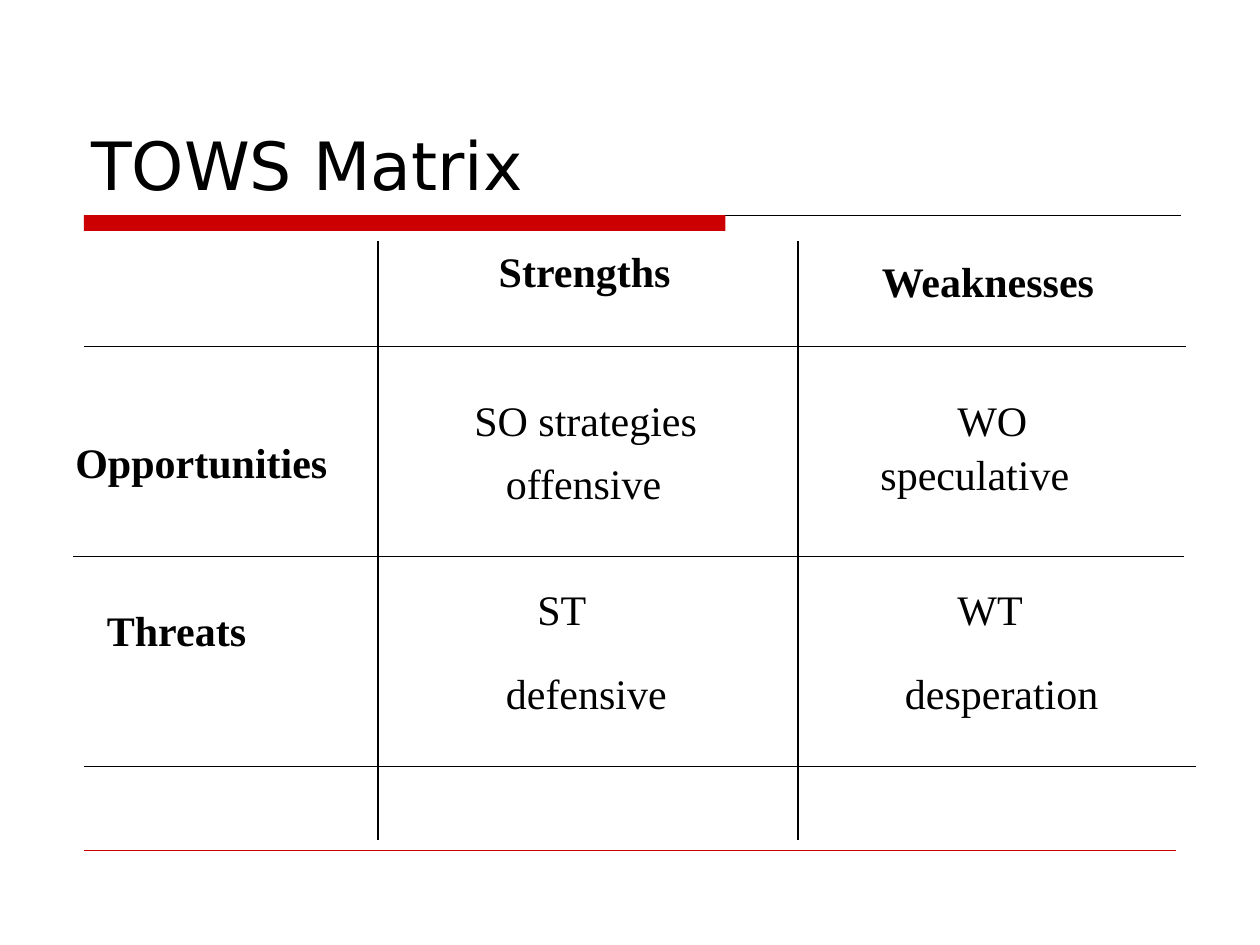
from pptx import Presentation
from pptx.dml.color import RGBColor
from pptx.enum import shapes, text
from pptx.oxml.ns import qn
from pptx.util import Pt

COLORS = {"ink": "000000", "accent": "CC0000"}
SERIF, SANS = "Times New Roman", "DejaVu Sans"

# left, top, width of each label, in points
HEADINGS = [
    ("Strengths", 277.9, 136.8, 113),
    ("Weaknesses", 496.8, 142.6, 136.8),
    ("Opportunities", 36, 246, 158.4),
    ("Threats", 54, 342, 94.3),
]
STRATEGIES = [
    ("SO strategies", 264, 222, 141.8),
    ("offensive", 282, 258, 103.7),
    ("WO", 540, 222, 54.7),
    ("speculative", 496, 252.6, 126),
    ("ST", 300, 330, 42.5),
    ("defensive", 282, 378, 106.6),
    ("WT", 540, 330, 51.8),
    ("desperation", 510, 378, 156),
]
COLUMN_LINES = [216, 456]
ROW_LINES = [(48, 198, 677.5), (42, 318, 676.8), (48, 438, 683.3)]


def rgb(name):
    return RGBColor.from_string(COLORS[name])


def add_text(s, content, left, top, width, height=36, *, size=24, font=SERIF,
             bold=False, anchor=text.MSO_ANCHOR.TOP):
    sp = s.shapes.add_textbox(Pt(left), Pt(top), Pt(width), Pt(height))
    tf = sp.text_frame
    tf.word_wrap = True
    tf.vertical_anchor = anchor
    # Labels sit in snug boxes, so they must not break
    if height == 36:
        tf.word_wrap = False
        tf.auto_size = text.MSO_AUTO_SIZE.SHAPE_TO_FIT_TEXT
    r = tf.paragraphs[0].add_run()
    r.text = content
    r.font.size = Pt(size)
    r.font.name = font
    r.font.bold = bold
    r.font.color.rgb = rgb("ink")


def add_line(s, x1, y1, x2, y2, color="ink", width=1):
    line = s.shapes.add_connector(shapes.MSO_CONNECTOR.STRAIGHT,
                                  Pt(x1), Pt(y1), Pt(x2), Pt(y2))
    line.line.color.rgb = rgb(color)
    line.line.width = Pt(width)
    sppr = line._element.spPr
    sppr.append(sppr.makeelement(qn("a:effectLst"), {}))


def add_bar(s, left, top, width, height):
    sp = s.shapes.add_shape(shapes.MSO_SHAPE.RECTANGLE,
                            Pt(left), Pt(top), Pt(width), Pt(height))
    sp.shadow.inherit = False
    sp.fill.solid()
    sp.fill.fore_color.rgb = rgb("accent")
    sp.line.fill.background()


def main():
    prs = Presentation()
    prs.slide_width, prs.slide_height = Pt(720), Pt(540)
    s = prs.slides.add_slide(prs.slide_layouts[6])

    add_line(s, 48, 123, 675, 123, width=0.5)
    add_bar(s, 48, 123, 366.5, 9)
    add_line(s, 48, 486, 672, 486, color="accent", width=0.25)
    add_text(s, "TOWS Matrix", 45, 24, 630, 96, size=38, font=SANS,
             anchor=text.MSO_ANCHOR.BOTTOM)

    for x in COLUMN_LINES:
        add_line(s, x, 138, x, 480)
    for left, y, right in ROW_LINES:
        add_line(s, left, y, right, y)

    for label in HEADINGS:
        add_text(s, *label, bold=True)
    for label in STRATEGIES:
        # Left-aligned text in a fixed box keeps its place when drawn
        add_text(s, *label)

    prs.save("out.pptx")


if __name__ == "__main__":
    main()
